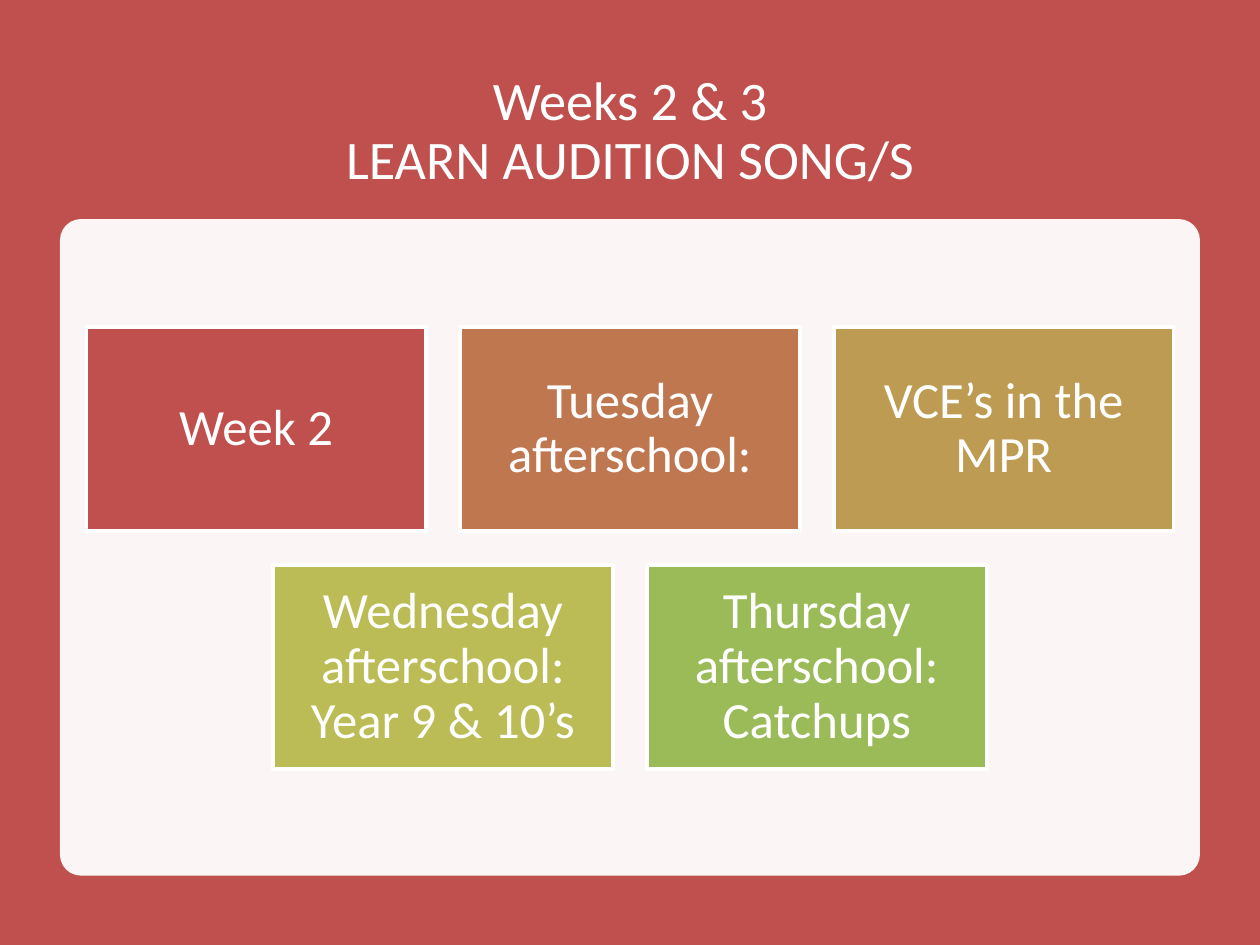
"""Build the audition song schedule slide."""
import dataclasses
import typing

import lxml.etree
import pptx
import pptx.dml.color
import pptx.enum.shapes
import pptx.enum.text
import pptx.oxml.ns
import pptx.util

Pt = pptx.util.Pt
Kind = pptx.enum.shapes.MSO_SHAPE


@dataclasses.dataclass(frozen=True)
class Theme:
    font: str = "Calibri"
    white: str = "FFFFFF"
    red: str = "C0504D"
    title: float = 31
    body: float = 29


@dataclasses.dataclass(frozen=True)
class Box:
    left: float
    top: float
    width: float
    height: float

    def spans(self) -> list:
        return [Pt(size) for size in dataclasses.astuple(self)]


@dataclasses.dataclass(frozen=True)
class Card:
    text: str
    fill: str


THEME = Theme()
WIDE, HIGH = 720, 540
CARD_W, CARD_H, GAP = 194.2, 116.5, 19.4
ROWS_TOP = 187
ROWS = [
    [
        Card("Week 2", THEME.red),
        Card("Tuesday afterschool:", "BF7750"),
        Card("VCE’s in the MPR", "BD9B53"),
    ],
    [
        Card("Wednesday afterschool: Year 9 & 10’s", "BCBC56"),
        Card("Thursday afterschool: Catchups", "9BBB59"),
    ],
]


def tint(code: str) -> pptx.dml.color.RGBColor:
    return pptx.dml.color.RGBColor.from_string(code)


def apply(target: typing.Any, values: dict) -> None:
    for name, value in values.items():
        setattr(target, name, value)


def add_shape(shapes: typing.Any, kind: Kind, box: Box, fill: str) -> typing.Any:
    shape = shapes.add_shape(kind, *box.spans())
    shape.shadow.inherit = False
    shape.fill.solid()
    shape.fill.fore_color.rgb = tint(fill)
    shape.line.fill.background()
    return shape


def add_text(shape: typing.Any, text: str, size: float, side: float, edge: float) -> None:
    frame = shape.text_frame
    apply(frame, {
        "word_wrap": True,
        "vertical_anchor": pptx.enum.text.MSO_ANCHOR.MIDDLE,
        "margin_left": Pt(side),
        "margin_right": Pt(side),
        "margin_top": Pt(edge),
        "margin_bottom": Pt(edge),
    })
    para = frame.paragraphs[0]
    para.text = text
    apply(para, {"alignment": pptx.enum.text.PP_ALIGN.CENTER, "line_spacing": 0.9})
    for run in para.runs:
        apply(run.font, {"name": THEME.font, "size": Pt(size)})
        run.font.color.rgb = tint(THEME.white)


def add_panel(shapes: typing.Any) -> None:
    panel = add_shape(shapes, Kind.ROUNDED_RECTANGLE, Box(34.3, 125.2, 651.4, 375.2), THEME.white)
    panel.adjustments[0] = 0.032
    color = next(panel.element.spPr.iter(pptx.oxml.ns.qn("a:srgbClr")))
    lxml.etree.SubElement(color, pptx.oxml.ns.qn("a:alpha"), val="95000")


def add_row(shapes: typing.Any, cards: list[Card], top: float) -> None:
    span = len(cards) * (CARD_W + GAP) - GAP
    start = (WIDE - span) / 2
    for index, card in enumerate(cards):
        box = Box(start + index * (CARD_W + GAP), top, CARD_W, CARD_H)
        shape = add_shape(shapes, Kind.RECTANGLE, box, card.fill)
        shape.line.color.rgb = tint(THEME.white)
        shape.line.width = Pt(2)
        add_text(shape, card.text, THEME.body, 8.7, 8.7)


def main() -> None:
    deck = pptx.Presentation()
    apply(deck, {"slide_width": Pt(WIDE), "slide_height": Pt(HIGH)})
    shapes = deck.slides.add_slide(deck.slide_layouts[6]).shapes
    add_shape(shapes, Kind.RECTANGLE, Box(0, 0, WIDE, HIGH), THEME.red)
    title = shapes.add_textbox(*Box(49.5, 36, 621, 79).spans())
    add_text(title, "Weeks 2 & 3\vLEARN AUDITION SONG/S", THEME.title, 7.2, 3.6)
    add_panel(shapes)
    group = shapes.add_group_shape()
    for index, cards in enumerate(ROWS):
        add_row(group.shapes, cards, ROWS_TOP + index * (CARD_H + GAP))
    deck.save("out.pptx")


if __name__ == "__main__":
    main()
